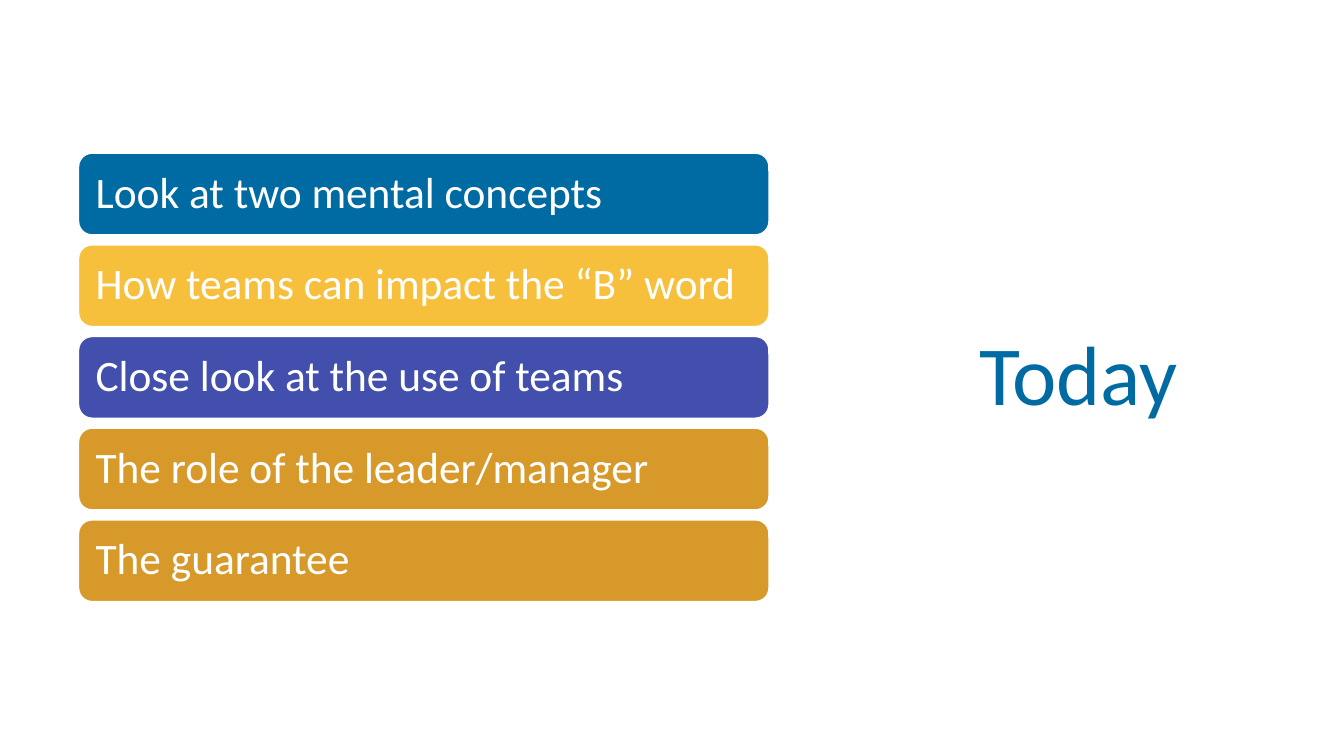
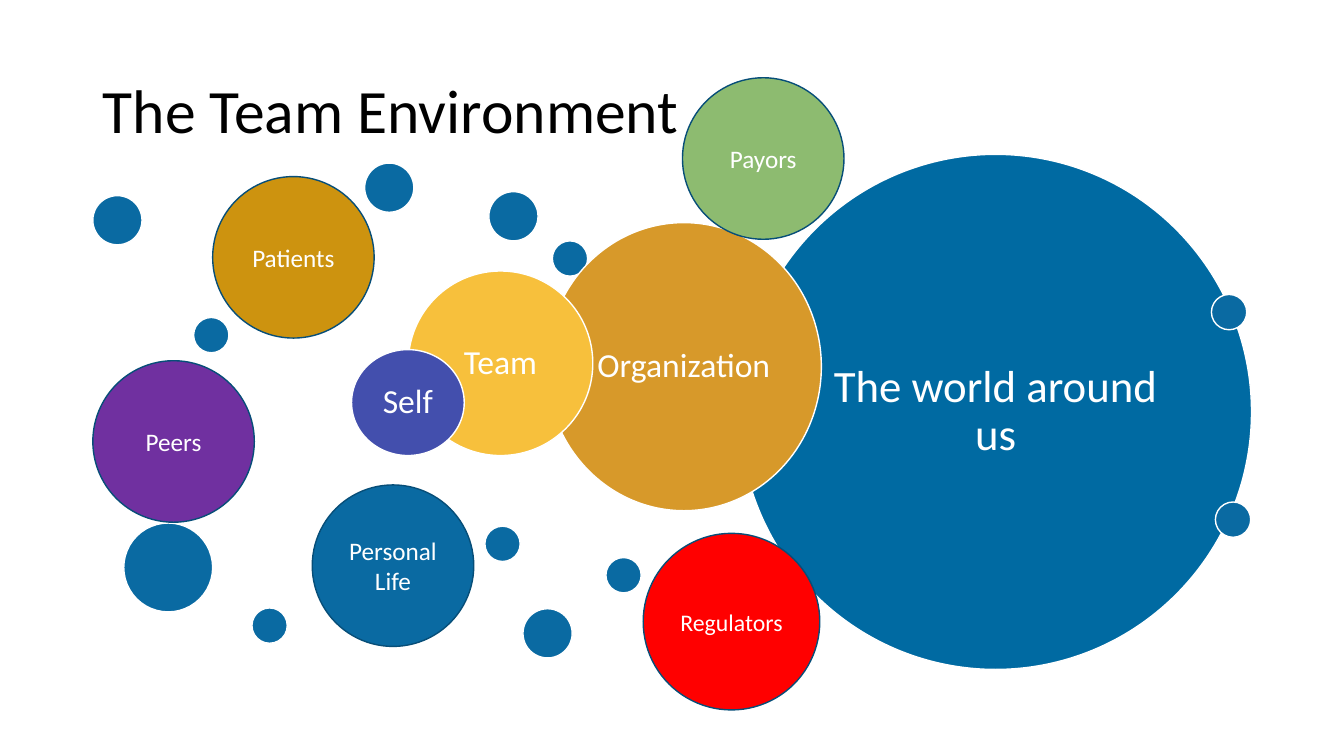
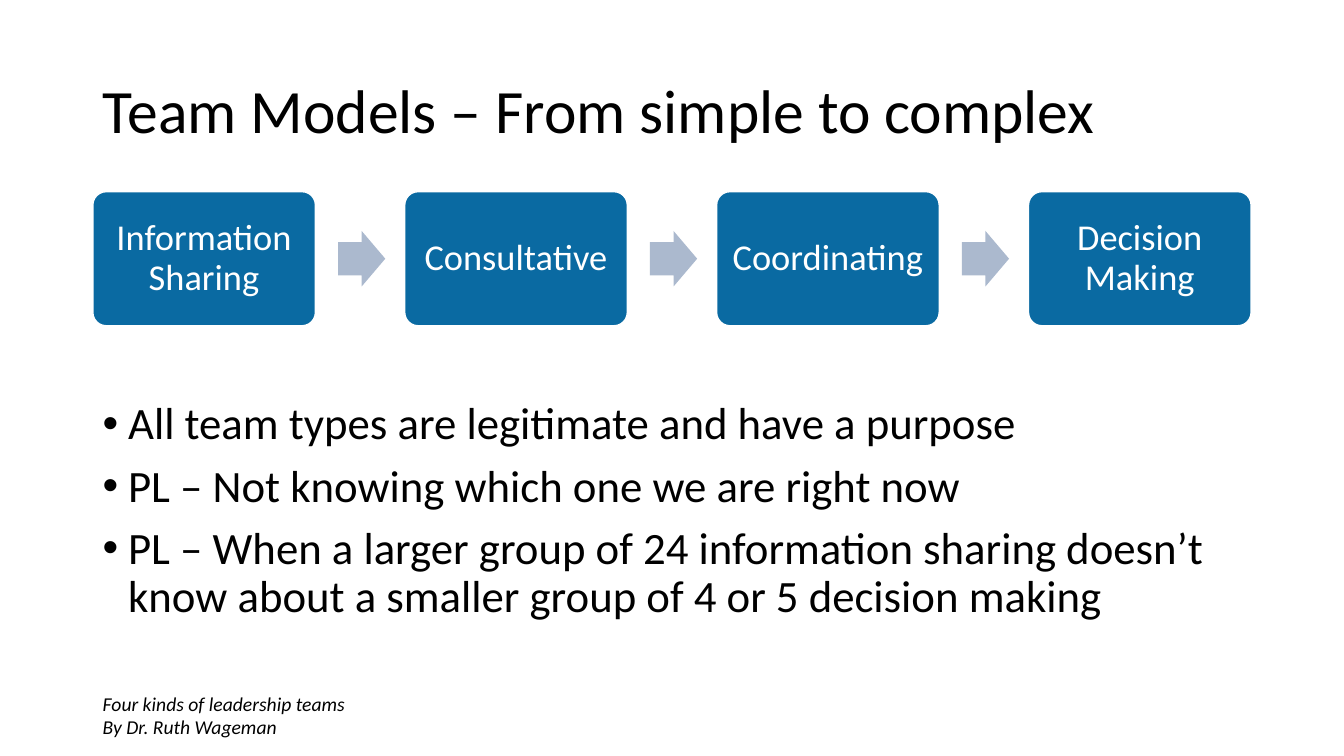
"""Build three slides about teams and their environment."""
import pptx
import pptx.chart.data
import pptx.dml.color
import pptx.enum.shapes
import pptx.enum.text
import pptx.util
import lxml.etree

Cm = pptx.util.Cm
Pt = pptx.util.Pt
RGBColor = pptx.dml.color.RGBColor
SHAPE = pptx.enum.shapes.MSO_SHAPE
ALIGN = pptx.enum.text.PP_ALIGN
ANCHOR = pptx.enum.text.MSO_ANCHOR
FIT = pptx.enum.text.MSO_AUTO_SIZE

FONT = "Calibri"
WHITE = RGBColor(0xFF, 0xFF, 0xFF)
BLACK = RGBColor(0x00, 0x00, 0x00)
DEEP = RGBColor(0x00, 0x6A, 0xA2)
BLUE = RGBColor(0x0A, 0x6A, 0xA2)
NAVY = RGBColor(0x07, 0x4E, 0x78)
YELLOW = RGBColor(0xF7, 0xC0, 0x3C)
INDIGO = RGBColor(0x43, 0x4F, 0xAD)
AMBER = RGBColor(0xD7, 0x99, 0x2A)
OCHRE = RGBColor(0xCD, 0x93, 0x0F)
PURPLE = RGBColor(0x70, 0x30, 0xA0)
GREEN = RGBColor(0x8D, 0xBB, 0x70)
RED = RGBColor(0xFF, 0x00, 0x00)
GREY = RGBColor(0xAB, 0xB9, 0xCE)

LEFT = 2.34
WIDTH = 29.21
TIGHT = 0.9

TOPICS = [
    ("Look at two mental concepts", DEEP),
    ("How teams can impact the “B” word", YELLOW),
    ("Close look at the use of teams", INDIGO),
    ("The role of the leader/manager", AMBER),
    ("The guarantee", AMBER),
]
WORLD = ("The world around us", 18.64, 3.89, 12.9, 12.98, DEEP, 32)
RINGS = [
    ("Organization", 13.77, 5.61, 6.93, 7.26, AMBER, 24),
    ("Team", 10.29, 6.83, 4.65, 4.65, YELLOW, 24),
    ("Self", 8.86, 8.81, 2.84, 2.67, INDIGO, 24),
]
DOTS = {
    0.89: [(12.22, 13.26), (30.53, 7.42), (13.92, 6.07), (4.88, 8),
           (6.35, 15.32), (15.27, 14.05), (30.63, 12.65)],
    1.24: [(12.32, 4.83), (13.18, 15.34), (9.19, 4.11), (LEFT, 4.93)],
    2.24: [(3.12, 13.18)],
}
ROLES = [
    ("Patients", 5.36, 4.45, 4.07, OCHRE, 18),
    ("Peers", LEFT, 9.09, 4.07, PURPLE, 18),
    ("Payors", 17.2, 1.96, 4.07, GREEN, 18),
    ("Regulators", 16.21, 13.44, 4.45, RED, 17),
    ("Personal Life", 7.87, 12.22, 4.07, BLUE, 18),
]
MODELS = ["Information Sharing", "Consultative", "Coordinating", "Decision Making"]
POINTS = [
    "All team types are legitimate and have a purpose",
    "PL – Not knowing which one we are right now",
    "PL – When a larger group of 24 information sharing doesn’t know about "
    "a smaller group of 4 or 5 decision making",
]
CREDIT = ["Four kinds of leadership teams", "By Dr. Ruth Wageman"]


def style(para, size, color, align=ALIGN.LEFT, space=TIGHT):
    """Format one paragraph."""
    para.alignment = align
    para.line_spacing = space
    para.font.name = FONT
    para.font.size = Pt(size)
    para.font.color.rgb = color


def place(shape, x, y, w, h):
    """Move and size a shape in centimetres."""
    shape.left, shape.top, shape.width, shape.height = map(Cm, (x, y, w, h))


def start(deck, text, box=(LEFT, 1.01, WIDTH, 3.68), size=44, color=BLACK,
          align=ALIGN.LEFT):
    """Add a titled slide."""
    slide = deck.slides.add_slide(deck.slide_layouts[5])
    title = slide.shapes.title
    place(title, *box)
    frame = title.text_frame
    frame.text = text
    frame.word_wrap = True
    frame.auto_size = FIT.NONE
    frame.vertical_anchor = ANCHOR.MIDDLE
    style(frame.paragraphs[0], size, color, align)
    return slide


def form(slide, kind, box, fill, line=WHITE):
    """Add a flat filled shape, outlined unless line is None."""
    shape = slide.shapes.add_shape(kind, *map(Cm, box))
    shape.shadow.inherit = False
    shape.fill.solid()
    shape.fill.fore_color.rgb = fill
    if line is None:
        shape.line.fill.background()
    else:
        shape.line.color.rgb = line
        shape.line.width = Pt(1)
    return shape


def label(shape, text, size, pad=0.25, align=ALIGN.CENTER, space=TIGHT):
    """Write white text in the middle of a shape."""
    frame = shape.text_frame
    frame.word_wrap = True
    frame.vertical_anchor = ANCHOR.MIDDLE
    frame.margin_left = frame.margin_right = Cm(pad)
    frame.margin_top = frame.margin_bottom = Cm(pad)
    frame.text = text
    style(frame.paragraphs[0], size, WHITE, align, space)


def note(slide, box, lines, wrap=True):
    """Add a text box with one paragraph per line."""
    frame = slide.shapes.add_textbox(*map(Cm, box)).text_frame
    frame.word_wrap = wrap
    frame.text = "\n".join(lines)
    return frame.paragraphs


def bullet(para):
    """Give a paragraph a hanging bullet."""
    props = para._p.get_or_add_pPr()
    props.set("marL", str(Cm(0.64)))
    props.set("indent", str(Cm(-0.64)))
    space = pptx.oxml.ns.qn("a:buFont")
    lxml.etree.SubElement(props, space, typeface="Arial")
    lxml.etree.SubElement(props, pptx.oxml.ns.qn("a:buChar"), char="•")


def today(deck):
    """Build the agenda slide."""
    slide = start(deck, "Today", (21.89, 1.88, 10.57, 15.29), 60, DEEP, ALIGN.CENTER)
    for row, (text, fill) in enumerate(TOPICS):
        bar = form(slide, SHAPE.ROUNDED_RECTANGLE,
                   (1.98, 3.86 + 2.31 * row, 17.4, 2.06), fill)
        label(bar, text, 31, 0.33, ALIGN.LEFT)


def ring(slide, text, x, y, w, h, fill, size):
    """Add one nested circle of the environment."""
    label(form(slide, SHAPE.OVAL, (x, y, w, h), fill), text, size)


def scene(deck):
    """Build the environment slide."""
    slide = start(deck, "The Team Environment")
    ring(slide, *WORLD)
    for size, spots in DOTS.items():
        for x, y in spots:
            form(slide, SHAPE.OVAL, (x, y, size, size), BLUE)
    for item in RINGS:
        ring(slide, *item)
    for text, x, y, side, fill, size in ROLES:
        role = form(slide, SHAPE.OVAL, (x, y, side, side), fill, NAVY)
        label(role, text, size, space=1.0)


def models(deck):
    """Build the team models slide."""
    slide = start(deck, "Team Models – From simple to complex")
    for step, text in enumerate(MODELS):
        x = LEFT + 7.86 * step
        if step:
            arrow = form(slide, SHAPE.RIGHT_ARROW, (x - 1.68, 5.82, 1.19, 1.4), GREY, None)
            arrow.adjustments[0] = 0.6
        card = form(slide, SHAPE.ROUNDED_RECTANGLE, (x, 4.83, 5.61, 3.38), BLUE)
        card.adjustments[0] = 0.1
        label(card, text, 26, 0.28)
    for spot, para in enumerate(note(slide, (LEFT, 9.98, WIDTH, 7.21), POINTS)):
        bullet(para)
        style(para, 32, BLACK)
        if spot:
            para.space_before = Pt(10)
    for para in note(slide, (LEFT, 17.3, 6.7, 1.45), CREDIT, False):
        style(para, 14, BLACK, space=1.0)
        para.font.italic = True


def main():
    """Build and save the deck."""
    deck = pptx.Presentation()
    deck.slide_width, deck.slide_height = Cm(33.87), Cm(19.05)
    today(deck)
    scene(deck)
    models(deck)
    deck.save("out.pptx")


if __name__ == "__main__":
    main()
